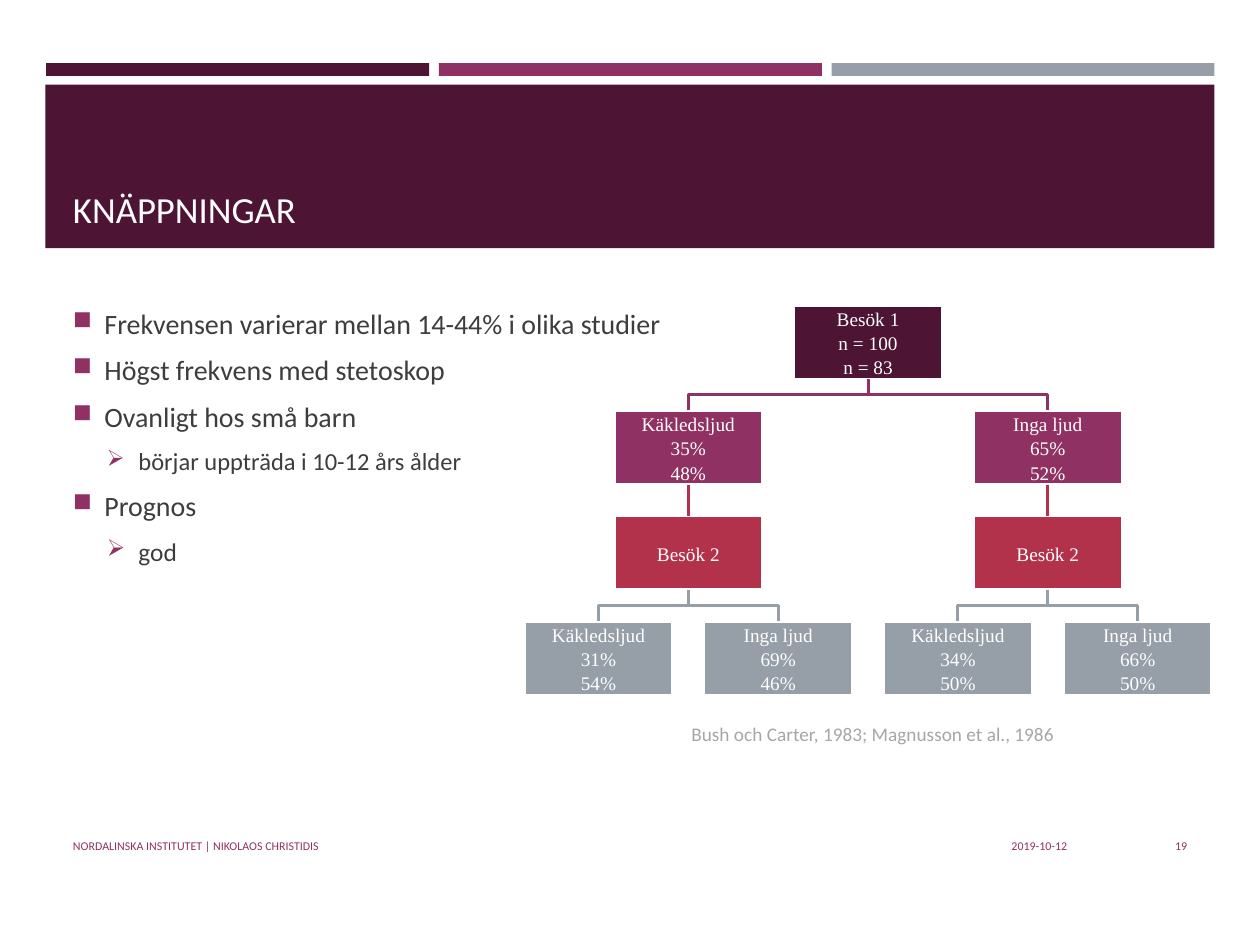
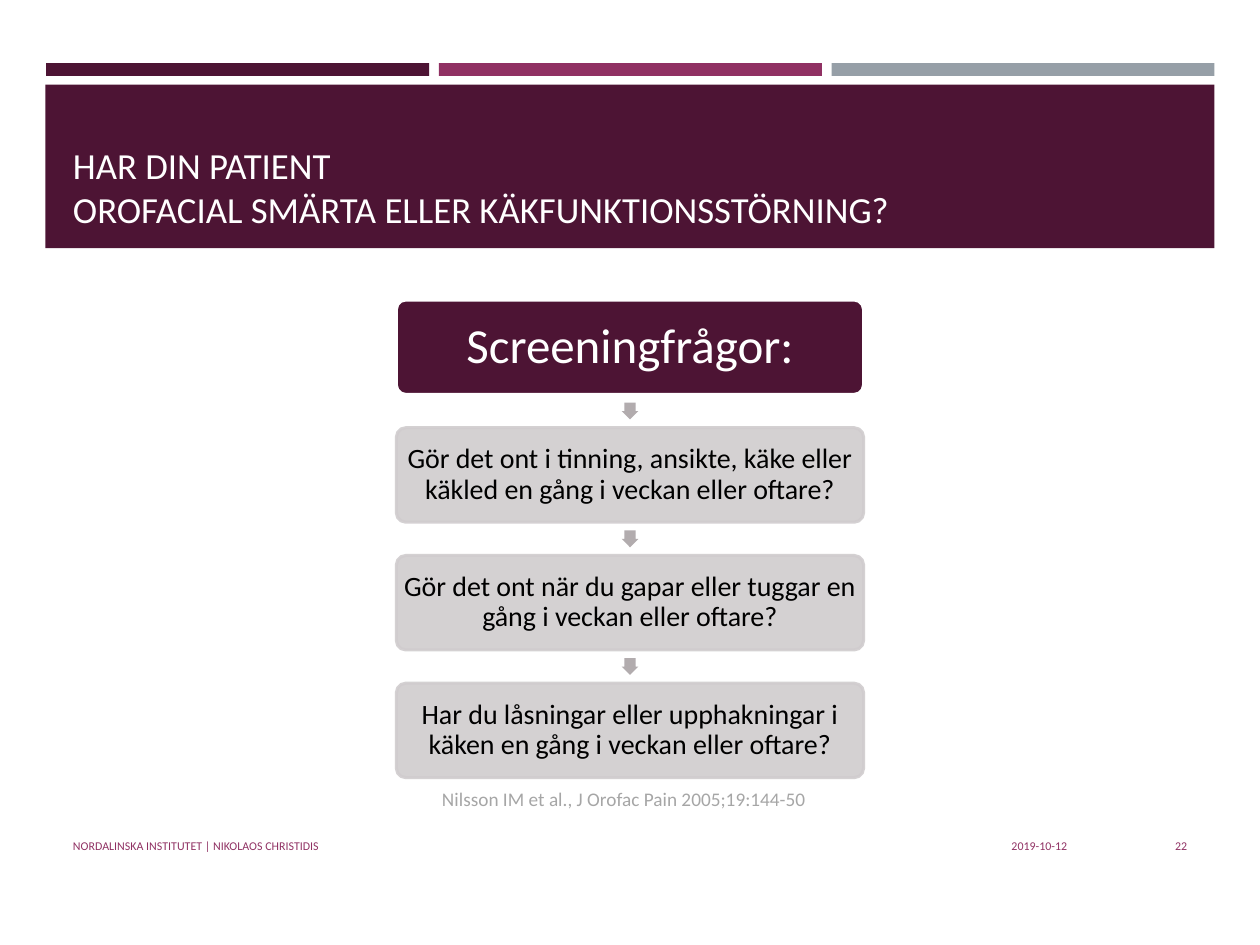
from lxml import etree
from pptx import Presentation
from pptx.dml.color import RGBColor
from pptx.enum import shapes, text
from pptx.oxml import ns
from pptx.util import Pt

PLUM = RGBColor(0x4D, 0x14, 0x34)
MAGENTA = RGBColor(0x90, 0x31, 0x63)
RED = RGBColor(0xB2, 0x32, 0x4B)
STEEL = RGBColor(0x96, 0x9F, 0xA7)
PALE = RGBColor(0xD0, 0xCC, 0xCE)
ARROW = RGBColor(0xB2, 0xAC, 0xAE)
INK = RGBColor(0x3D, 0x3D, 0x3D)
CITATION = RGBColor(0xA6, 0xA6, 0xA6)
BLACK = RGBColor(0, 0, 0)
WHITE = RGBColor(0xFF, 0xFF, 0xFF)

LEFT, CENTER, RIGHT = text.PP_ALIGN.LEFT, text.PP_ALIGN.CENTER, text.PP_ALIGN.RIGHT
TOP, MIDDLE, BOTTOM = text.MSO_ANCHOR.TOP, text.MSO_ANCHOR.MIDDLE, text.MSO_ANCHOR.BOTTOM
RECT, ROUNDED = shapes.MSO_SHAPE.RECTANGLE, shapes.MSO_SHAPE.ROUNDED_RECTANGLE
LINE_WIDTH = Pt(1.75)


def add_box(s, kind, x, y, w, h, fill, line=None):
    sp = s.shapes.add_shape(kind, Pt(x), Pt(y), Pt(w), Pt(h))
    sp.shadow.inherit = False
    sp.fill.solid()
    sp.fill.fore_color.rgb = fill
    if line is None:
        sp.line.fill.background()
    else:
        sp.line.color.rgb = line
        sp.line.width = LINE_WIDTH
    return sp


def write(sp, lines, size, color, align=LEFT, anchor=TOP, font="Calibri", inset=None, spacing=None):
    """Fill a shape with one paragraph per line and format it."""
    tf = sp.text_frame
    tf.word_wrap = True
    tf.vertical_anchor = anchor
    if inset is not None:
        tf.margin_left = tf.margin_right = tf.margin_top = tf.margin_bottom = Pt(inset)
    for i, line in enumerate(lines):
        p = tf.add_paragraph() if i else tf.paragraphs[0]
        p.text = line
        p.alignment = align
        p.line_spacing = spacing
        for r in p.runs:
            r.font.size = Pt(size)
            r.font.name = font
            r.font.color.rgb = color
    return tf


prs = Presentation()
prs.slide_width, prs.slide_height = Pt(720), Pt(540)

# Bands, title, citation and footer on every slide
pages = [
    ("KNÄPPNINGAR", "19", "Bush och Carter, 1983; Magnusson et al., 1986", 388, 409),
    ("HAR DIN PATIENT\vOROFACIAL SMÄRTA ELLER KÄKFUNKTIONSSTÖRNING?", "22",
     "Nilsson IM et al., J Orofac Pain 2005;19:144-50", 245.5, 446.5),
]
for title, number, citation, cite_x, cite_y in pages:
    s = prs.slides.add_slide(prs.slide_layouts[6])
    for i, color in enumerate((PLUM, MAGENTA, STEEL)):
        add_box(s, RECT, 26.4 + 224.4 * i, 36, 218.8, 7.4, color)
    add_box(s, RECT, 26, 48.4, 668, 93.4, PLUM)
    for x, y, w, h, words, size, color, align, anchor in (
        (34.6, 55.4, 651.6, 80, title, 21, WHITE, LEFT, BOTTOM),
        (cite_x, cite_y, 230, 21, citation, 11, CITATION, LEFT, TOP),
        (34.6, 468.7, 408, 28.8, "NORDALINSKA INSTITUTET | NIKOLAOS CHRISTIDIS", 6.8, MAGENTA, LEFT, MIDDLE),
        (449.3, 468.7, 167.7, 28.8, "2019-10-12", 6.8, MAGENTA, RIGHT, MIDDLE),
        (623.5, 468.7, 62, 28.8, number, 6.8, MAGENTA, RIGHT, MIDDLE),
    ):
        sp = s.shapes.add_textbox(Pt(x), Pt(y), Pt(w), Pt(h))
        write(sp, [words], size, color, align, anchor)

clicks, screening = prs.slides

# Bullets on clicking sounds: level, size, words
bullets = [
    (0, 16, "Frekvensen varierar mellan 14-44% i olika studier"),
    (0, 16, "Högst frekvens med stetoskop"),
    (0, 16, "Ovanligt hos små barn"),
    (1, 14, "börjar uppträda i 10-12 års ålder"),
    (0, 16, "Prognos"),
    (1, 14.5, "god"),
]
sp = clicks.shapes.add_textbox(Pt(34.6), Pt(171.4), Pt(651.6), Pt(289.4))
tf = write(sp, [words for _, _, words in bullets], 16, INK)
for p, (level, size, _) in zip(tf.paragraphs, bullets):
    p.level = level
    p.space_before, p.space_after = Pt(3), Pt(4.5)
    p.runs[0].font.size = Pt(size)
    pPr = p._p.get_or_add_pPr()
    pPr.set("marL", str(Pt((18, 37.4)[level])))
    pPr.set("indent", str(Pt(-18)))
    bullet_color = etree.SubElement(pPr, ns.qn("a:buClr"))
    etree.SubElement(bullet_color, ns.qn("a:srgbClr"), val=str(MAGENTA))
    etree.SubElement(pPr, ns.qn("a:buSzPct"), val="92000")
    etree.SubElement(pPr, ns.qn("a:buChar"), char="■➢"[level])

# Tree of visits: column (in leaf widths), level, parent, lines
LEVEL_COLORS = (PLUM, MAGENTA, RED, STEEL)
NODE_W, NODE_H = 85, 42.4
COLUMN, LEVEL = 102.7, 60.2
TREE_X, TREE_Y = 342, 174.4
nodes = [
    (1.5, 0, None, ["Besök 1", "n = 100", "n = 83"]),
    (0.5, 1, 0, ["Käkledsljud", "35%", "48%"]),
    (2.5, 1, 0, ["Inga ljud", "65%", "52%"]),
    (0.5, 2, 1, ["Besök 2"]),
    (2.5, 2, 2, ["Besök 2"]),
    (0, 3, 3, ["Käkledsljud", "31%", "54%"]),
    (1, 3, 3, ["Inga ljud", "69%", "46%"]),
    (2, 3, 4, ["Käkledsljud", "34%", "50%"]),
    (3, 3, 4, ["Inga ljud", "66%", "50%"]),
]
boxes = []
for column, level, parent, lines in nodes:
    color = LEVEL_COLORS[level]
    x, y = TREE_X + COLUMN * column, TREE_Y + LEVEL * level
    sp = add_box(clicks, RECT, x - NODE_W / 2, y, NODE_W, NODE_H, color, WHITE)
    write(sp, lines, 11, WHITE, CENTER, MIDDLE, "Times New Roman", 0.7, 1.05)
    boxes.append(sp)
    if parent is None:
        continue
    parent_x = TREE_X + COLUMN * nodes[parent][0]
    parent_y = y - LEVEL + NODE_H
    if parent_x == x:
        branch = clicks.shapes.add_connector(
            shapes.MSO_CONNECTOR.STRAIGHT, Pt(x), Pt(parent_y), Pt(x), Pt(y))
        branch.begin_connect(boxes[parent], 2)
        branch.end_connect(sp, 0)
        etree.SubElement(branch._element.spPr, ns.qn("a:effectLst"))
    else:
        middle = (parent_y + y) / 2
        outline = clicks.shapes.build_freeform(Pt(parent_x), Pt(parent_y))
        outline.add_line_segments(
            [(Pt(parent_x), Pt(middle)), (Pt(x), Pt(middle)), (Pt(x), Pt(y))], close=False)
        branch = outline.convert_to_shape()
        branch.shadow.inherit = False
        branch.fill.background()
    branch.line.color.rgb = color
    branch.line.width = LINE_WIDTH

# Chain of screening questions
STEP_X, STEP_Y, STEP_W, STEP_H, STEP = 226.5, 171.4, 267, 54, 73
ARROW_SIZE = 9.6
steps = [
    "Screeningfrågor:",
    "Gör det ont i tinning, ansikte, käke eller käkled en gång i veckan eller oftare?",
    "Gör det ont när du gapar eller tuggar en gång i veckan eller oftare?",
    "Har du låsningar eller upphakningar i käken en gång i veckan eller oftare?",
]
for i, words in enumerate(steps):
    y = STEP_Y + STEP * i
    fill, line, size, color = (PALE, PALE, 16, BLACK) if i else (PLUM, WHITE, 28, WHITE)
    sp = add_box(screening, ROUNDED, STEP_X, y, STEP_W, STEP_H, fill, line)
    sp.adjustments[0] = 0.1
    write(sp, [words], size, color, CENTER, MIDDLE, inset=1.5, spacing=0.9)
    if i:
        for clr in sp._element.spPr.iter(ns.qn("a:srgbClr")):
            etree.SubElement(clr, ns.qn("a:alpha"), val="90000")
        gap_middle = y - (STEP - STEP_H) / 2
        arrow = add_box(screening, shapes.MSO_SHAPE.DOWN_ARROW, 360 - ARROW_SIZE / 2,
                        gap_middle - ARROW_SIZE / 2, ARROW_SIZE, ARROW_SIZE, ARROW)
        arrow.adjustments[0], arrow.adjustments[1] = 0.67, 0.5

prs.save("out.pptx")
